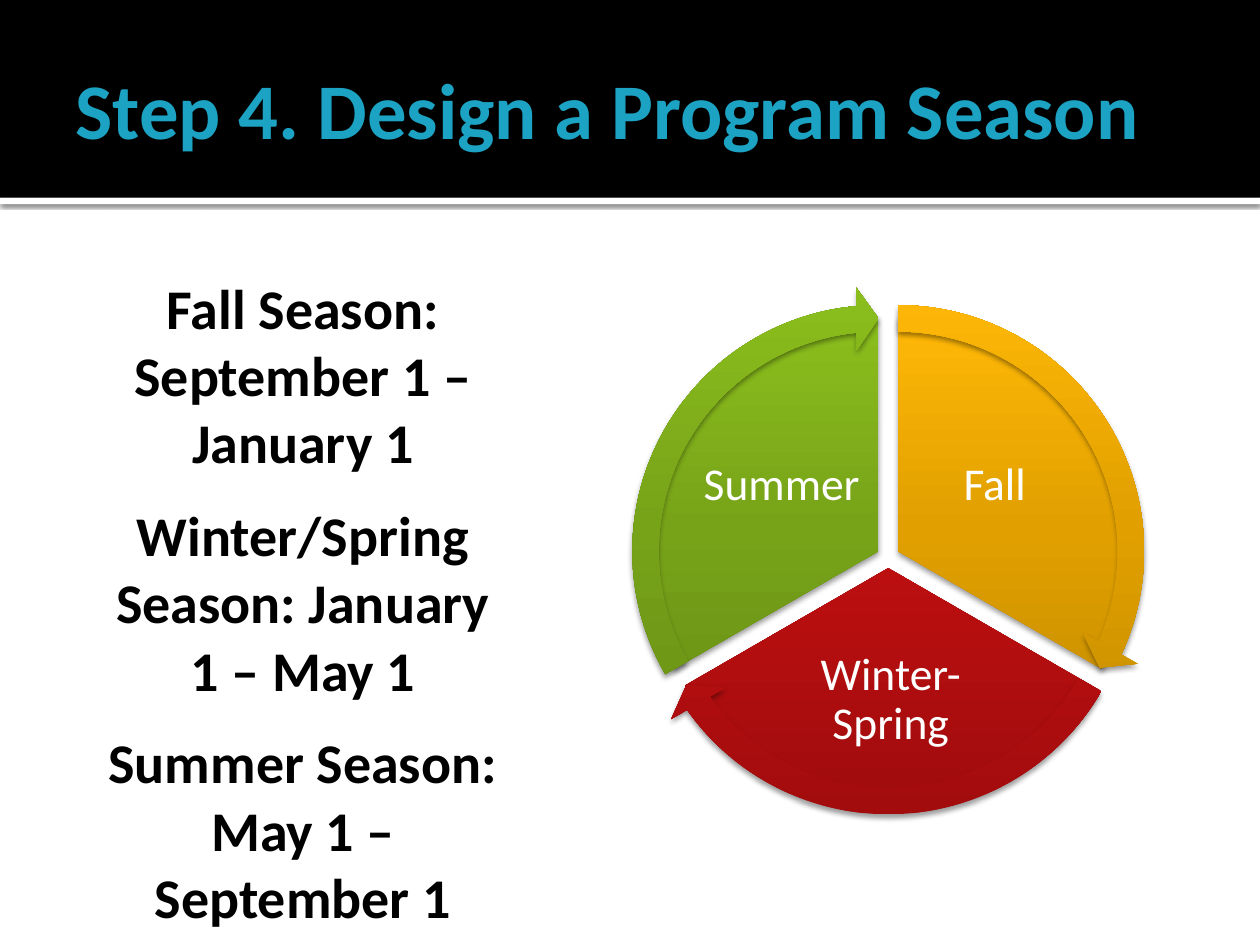
from copy import deepcopy
from dataclasses import dataclass
from math import cos, radians, sin

from lxml.etree import SubElement
from pptx import Presentation
from pptx.dml.color import RGBColor
from pptx.enum.shapes import MSO_SHAPE
from pptx.enum.text import MSO_ANCHOR, MSO_AUTO_SIZE, PP_ALIGN
from pptx.oxml.ns import qn
from pptx.util import Inches, Pt

TITLE = "Step 4. Design a Program Season"
SEASON_DATES = [
    "Fall Season: September 1 – January 1",
    "Winter/Spring Season: January 1 – May 1",
    "Summer Season: May 1 – September 1",
]
# Angles run clockwise from the right; label boxes are left, top, width, height.
SEASONS = [
    {"label": "Fall", "direction": -30, "slice": (162, 18), "arrow": (14.72, 161.99),
     "label_box": (7.23, 3.3, 1.33, 1.11), "gradient": ("BF8800", "E1A000", "FFB807")},
    {"label": "Winter-Spring", "direction": 90, "slice": (18, 90), "arrow": (86.72, 18),
     "label_box": (6.07, 5.07, 2, 0.98), "gradient": ("A10C0D", "BE0F10", "DD1112")},
    {"label": "Summer", "direction": 210, "slice": (90, 162), "arrow": (158.73, 90),
     "label_box": (5.54, 3.3, 1.33, 1.11), "gradient": ("658B15", "77A319", "8BBE1D")},
]


@dataclass(frozen=True)
class Theme:
    font: str = "Calibri"
    title_color: str = "1CA2C3"
    dark: str = "000000"
    light: str = "FFFFFF"
    title_size: int = 45
    body_size: int = 32
    label_size: int = 26
    paragraph_gap: float = 14.6


THEME = Theme()
SLIDE_WIDTH, SLIDE_HEIGHT = 10, 7.5
BANNER_HEIGHT, RULE_HEIGHT = 1.57, 0.05
CYCLE_CENTER = (7.05, 4.42)
SLICE_OFFSET, SLICE_SIZE, ARROW_SIZE = 0.09, 3.73, 4.2
GRADIENT_STOPS = (0, 0.55, 1)


def place(shape, box):
    shape.left, shape.top, shape.width, shape.height = map(Inches, box)


def write_text(shape, paragraphs, *, size, color, bold=False, align=PP_ALIGN.LEFT,
               anchor=MSO_ANCHOR.TOP, insets=(0.04,) * 4, line_spacing=1.0, gap=0):
    frame = shape.text_frame
    frame.word_wrap = True
    frame.auto_size = MSO_AUTO_SIZE.NONE
    frame.vertical_anchor = anchor
    (frame.margin_left, frame.margin_top,
     frame.margin_right, frame.margin_bottom) = map(Inches, insets)
    for index, text in enumerate(paragraphs):
        para = frame.paragraphs[0] if index == 0 else frame.add_paragraph()
        properties = para._p.get_or_add_pPr()
        properties.set("marL", "0")
        properties.set("indent", "0")
        SubElement(properties, qn("a:buNone"))
        para.alignment = align
        para.line_spacing = line_spacing
        para.space_before = Pt(gap if index else 0)
        span = para.add_run()
        span.text = text
        span.font.name = THEME.font
        span.font.size = Pt(size)
        span.font.bold = bold
        span.font.color.rgb = RGBColor.from_string(color)


def add_shadow(shape, opacity, blur, distance):
    effects = shape._element.spPr.find(qn("a:effectLst"))
    shadow = SubElement(effects, qn("a:outerShdw"), blurRad=str(Pt(blur)),
                        dist=str(Pt(distance)), dir="5400000", rotWithShape="0")
    color = SubElement(shadow, qn("a:srgbClr"), val=THEME.dark)
    SubElement(color, qn("a:alpha"), val=str(opacity * 1000))


def add_plain_shape(page, kind, box):
    shape = page.shapes.add_shape(kind, *map(Inches, box))
    shape.shadow.inherit = False
    shape.line.fill.background()
    return shape


def add_band(page, top, height, color):
    band = add_plain_shape(page, MSO_SHAPE.RECTANGLE, (0, top, SLIDE_WIDTH, height))
    band.fill.solid()
    band.fill.fore_color.rgb = RGBColor.from_string(color)
    page.shapes._spTree.insert(2, band._element)  # behind the placeholders
    return band


def fill_gradient(shape, colors):
    """Blend the colours upwards, from the bottom edge to the top."""
    shape.fill.gradient()
    shape.fill.gradient_angle = 90
    stop_list = shape.fill._xPr.find(qn("a:gradFill")).find(qn("a:gsLst"))
    stop_list.append(deepcopy(stop_list[-1]))
    for stop, position, color in zip(shape.fill.gradient_stops, GRADIENT_STOPS, colors):
        stop.position = position
        stop.color.rgb = RGBColor.from_string(color)


def add_cycle_part(page, season, kind, size, adjustments):
    angle = radians(season["direction"])
    left = CYCLE_CENTER[0] + SLICE_OFFSET * cos(angle) - size / 2
    top = CYCLE_CENTER[1] + SLICE_OFFSET * sin(angle) - size / 2
    part = add_plain_shape(page, kind, (left, top, size, size))
    for index, value in enumerate(adjustments):
        part.adjustments[index] = value
    fill_gradient(part, season["gradient"])
    add_shadow(part, 38, 3.1, 2)


def add_cycle(page):
    for season in SEASONS:
        add_cycle_part(page, season, MSO_SHAPE.PIE, SLICE_SIZE, season["slice"])
        label = page.shapes.add_textbox(*map(Inches, season["label_box"]))
        write_text(label, [season["label"]], size=THEME.label_size, color=THEME.light,
                   align=PP_ALIGN.CENTER, anchor=MSO_ANCHOR.MIDDLE, line_spacing=0.9)
    for season in SEASONS:
        head, tail = season["arrow"]
        add_cycle_part(page, season, MSO_SHAPE.CIRCULAR_ARROW, ARROW_SIZE,
                       (0.05, 3.28, head, tail, 0.06))


def main():
    deck = Presentation()
    deck.slide_width, deck.slide_height = Inches(SLIDE_WIDTH), Inches(SLIDE_HEIGHT)
    page = deck.slides.add_slide(deck.slide_layouts[1])

    add_band(page, 0, BANNER_HEIGHT, THEME.dark)
    rule = add_band(page, BANNER_HEIGHT, RULE_HEIGHT, THEME.light)
    add_shadow(rule, 60, 2.5, 0.8)

    title, body = page.shapes.title, page.placeholders[1]
    place(title, (0.5, 0.17, 9.31, 1.37))
    write_text(title, [TITLE], size=THEME.title_size, color=THEME.title_color, bold=True,
               anchor=MSO_ANCHOR.MIDDLE, insets=(0.1, 0.05, 0.05, 0.05))
    place(body, (0.79, 2.07, 3.27, 5.07))
    write_text(body, SEASON_DATES, size=THEME.body_size, color=THEME.dark, bold=True,
               align=PP_ALIGN.CENTER, insets=(0.06, 0.1, 0.1, 0.05),
               gap=THEME.paragraph_gap)
    add_cycle(page)
    deck.save("out.pptx")


if __name__ == "__main__":
    main()
